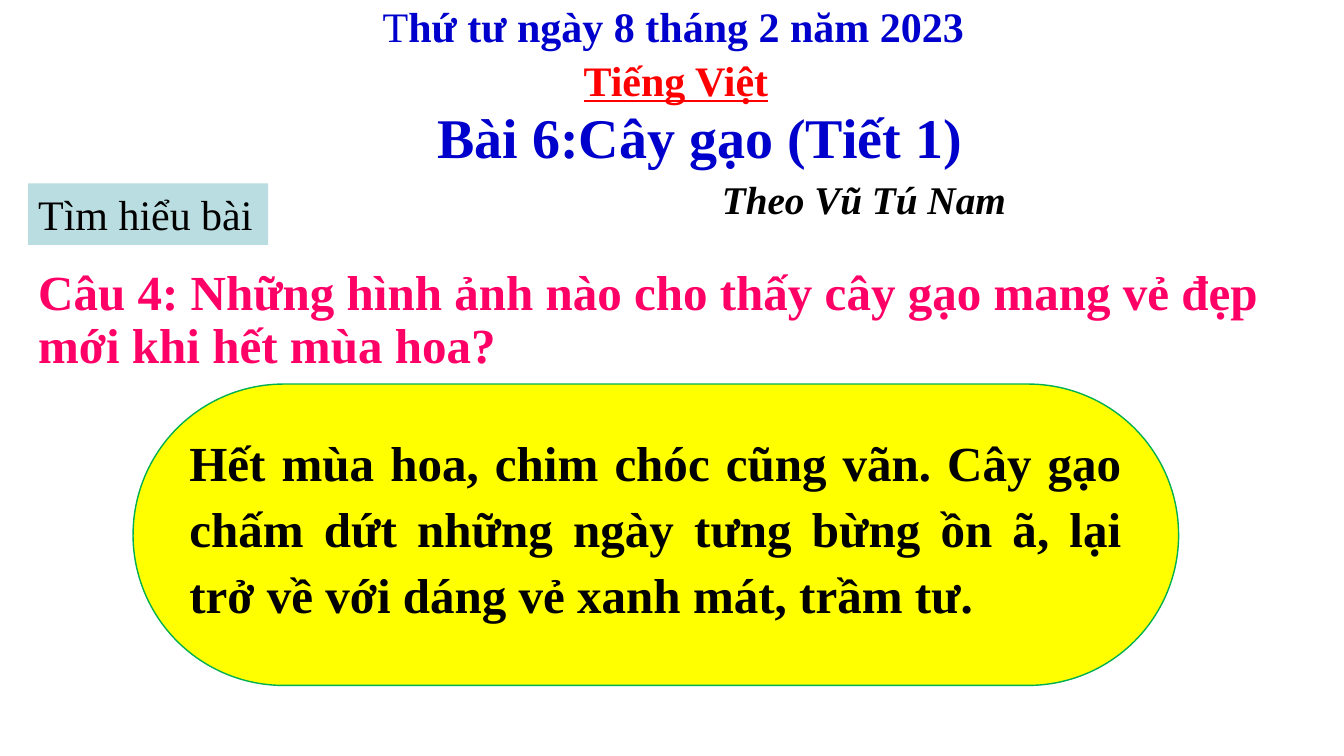
import pptx
import pptx.util
import pptx.dml.color
import pptx.enum.shapes
import pptx.enum.text

Inches, Pt = pptx.util.Inches, pptx.util.Pt
SHAPE = pptx.enum.shapes.MSO_SHAPE
ALIGN = pptx.enum.text.PP_ALIGN


class Theme:
    font = "Times New Roman"
    black, blue, red, pink = "000000", "0000CC", "FF0000", "FF0066"
    tag_fill, answer_fill, answer_line = "BADDE1", "FFFF00", "00B050"
    small, normal, body, title = 28, 30, 35, 40


class LessonSlide:
    def __init__(self, prs, theme):
        self.theme = theme
        self.s = prs.slides.add_slide(prs.slide_layouts[6])

    def rgb(self, value):
        return pptx.dml.color.RGBColor.from_string(value)

    def shape(self, kind, at, fill, line=None, parent=None):
        sp = (parent or self.s).shapes.add_shape(kind, *map(Inches, at))
        sp.shadow.inherit = False
        sp.fill.solid()
        sp.fill.fore_color.rgb = self.rgb(fill)
        if line:
            sp.line.color.rgb = self.rgb(line)
            sp.line.width = Pt(1)
        else:
            sp.line.fill.background()
        return sp

    def text_box(self, at, parent=None, wrap=True, inset=(0.1, 0.05)):
        sp = (parent or self.s).shapes.add_textbox(*map(Inches, at))
        tf = sp.text_frame
        tf.word_wrap = wrap
        tf.margin_left = tf.margin_right = Inches(inset[0])
        tf.margin_top = tf.margin_bottom = Inches(inset[1])
        return sp

    def paragraph(self, sp, runs, size, color, first=True, indent=0, **fmt):
        """Write one paragraph; runs is a list of (text, font values)."""
        tf = sp.text_frame
        p = tf.paragraphs[0] if first else tf.add_paragraph()
        if indent:
            p._p.get_or_add_pPr().set("marL", str(Inches(indent)))
        for name, value in fmt.items():
            setattr(p, name, value)
        for text, values in runs:
            r = p.add_run()
            r.text = text
            font = {"name": self.theme.font, "size": Pt(size), **values}
            for name, value in font.items():
                setattr(r.font, name, value)
            r.font.color.rgb = self.rgb(color)


def main():
    prs = pptx.Presentation()
    prs.slide_width, prs.slide_height = Inches(13.33), Inches(7.5)
    t = Theme()
    s = LessonSlide(prs, t)
    bold = {"bold": True}

    # Subject
    sp = s.text_box((5.69, 0.49, 2.05, 0.6), wrap=False)
    s.paragraph(sp, [("Tiếng Việt", {**bold, "underline": True})], t.normal, t.red)

    # Section tag
    sp = s.shape(SHAPE.RECTANGLE, (0.28, 1.82, 2.38, 0.61), t.tag_fill)
    sp.text_frame.vertical_anchor = pptx.enum.text.MSO_ANCHOR.TOP
    s.paragraph(sp, [("Tìm hiểu bài", {})], t.normal, t.black, alignment=ALIGN.LEFT)

    # Question
    sp = s.text_box((0.28, 2.61, 12.8, 1.16))
    question = "Câu 4: Những hình ảnh nào cho thấy cây gạo mang vẻ đẹp mới khi hết mùa hoa?"
    s.paragraph(sp, [(question, bold)], t.body, t.pink, line_spacing=0.9)

    # Answer panel
    group = s.s.shapes.add_group_shape()
    sp = s.shape(SHAPE.ROUNDED_RECTANGLE, (1.32, 3.81, 10.37, 2.99),
                 t.answer_fill, t.answer_line, group)
    sp.adjustments[0] = 0.5
    sp = s.text_box((1.78, 4.17, 9.45, 2.08), group)
    answer = ("Hết mùa hoa, chim chóc cũng vãn. Cây gạo chấm dứt những ngày "
              "tưng bừng ồn ã, lại trở về với dáng vẻ xanh mát, trầm tư.")
    s.paragraph(sp, [(answer, bold)], t.body, t.black,
                alignment=ALIGN.JUSTIFY, line_spacing=1.12)

    # Date
    sp = s.text_box((3.05, -0.04, 7.26, 0.6))
    s.paragraph(sp, [("T", {}), ("hứ tư ngày 8 tháng 2 năm 2023", bold)],
                t.normal, t.blue, alignment=ALIGN.CENTER)

    # Lesson title and author
    sp = s.text_box((3.52, 0.96, 6.84, 1.33), inset=(0.12, 0.06))
    s.paragraph(sp, [("Bài 6:Cây gạo (Tiết 1)", bold)], t.title, t.blue,
                alignment=ALIGN.CENTER)
    s.paragraph(sp, [("Theo Vũ Tú Nam", {**bold, "italic": True})], t.small, t.black,
                first=False, indent=3.52, alignment=ALIGN.LEFT, space_before=Pt(3.6))

    prs.save("out.pptx")


if __name__ == "__main__":
    main()
